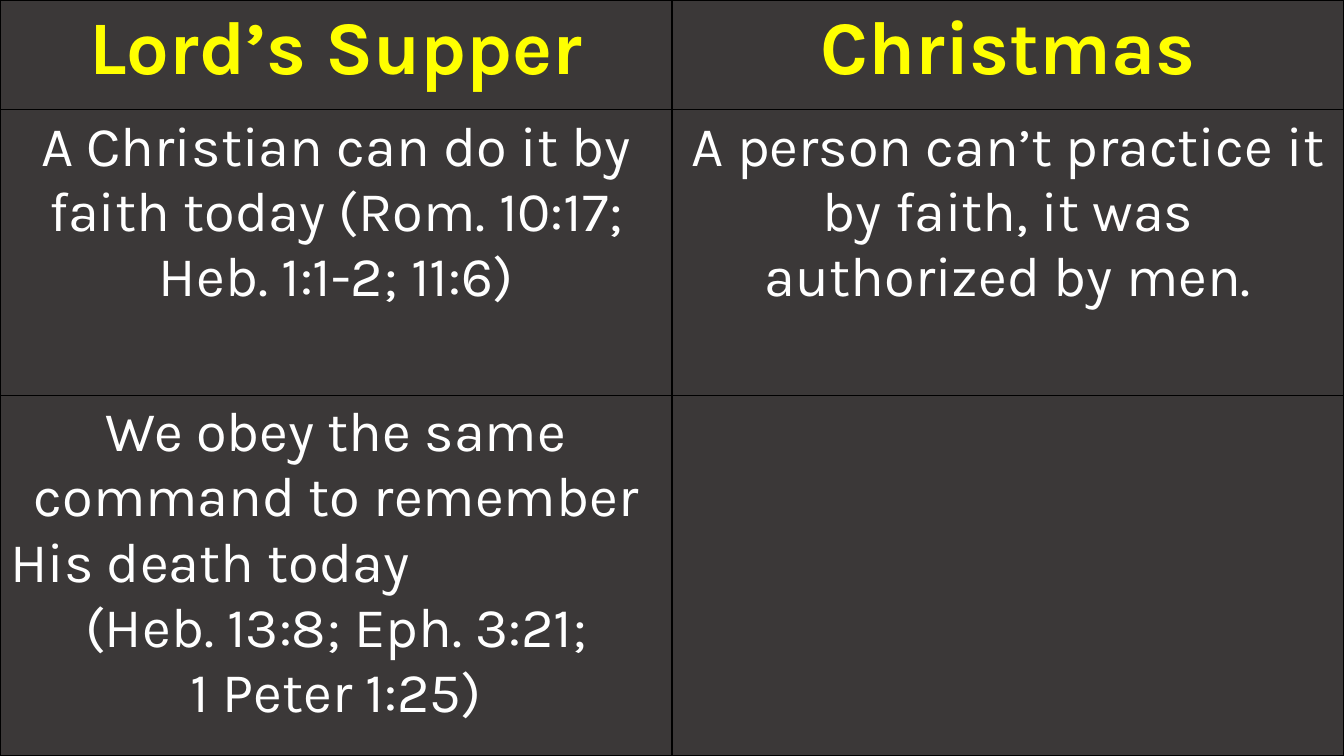
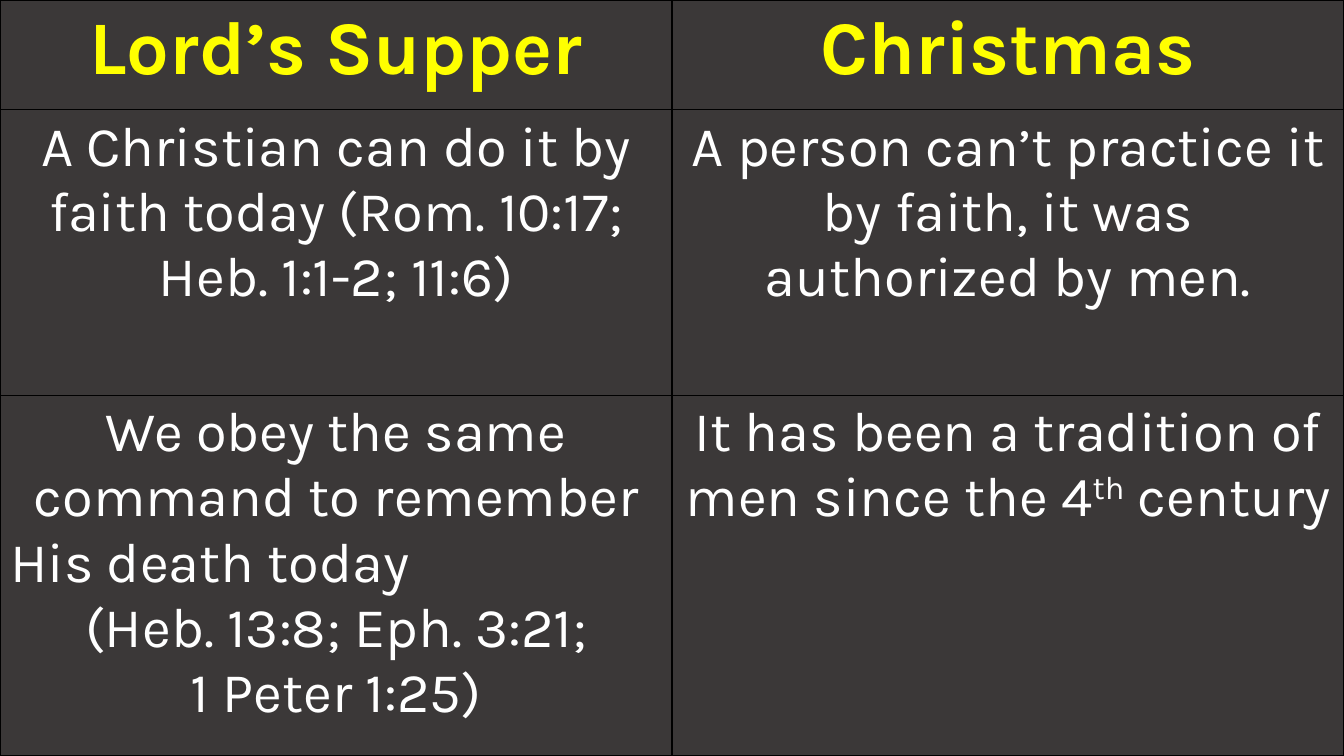
from lxml import etree
from pptx import Presentation
from pptx.dml.color import RGBColor
from pptx.enum.text import PP_ALIGN as Align
from pptx.oxml.ns import qn
from pptx.util import Inches, Pt

BLACK = RGBColor(0x00, 0x00, 0x00)
CHARCOAL = RGBColor(0x3B, 0x38, 0x38)
YELLOW = RGBColor(0xFF, 0xFF, 0x00)
WHITE = RGBColor(0xFF, 0xFF, 0xFF)
FONT = "Karla"
SLIDE_WIDTH, SLIDE_HEIGHT = Inches(13.33), Inches(7.5)
ROW_HEIGHTS = (1.09, 2.83, 3.58)

# A cell is a list of paragraphs: (alignment, list of run texts).
# Every second run of a paragraph is superscript.
CENTER, LEFT = Align.CENTER, Align.LEFT
HEADINGS = [[(CENTER, ["Lord’s Supper"])], [(CENTER, ["Christmas"])]]
FAITH = [
    [(CENTER, ["A Christian can do it by faith today (Rom. 10:17; Heb. 1:1-2; 11:6)"])],
    [(CENTER, ["A person can’t practice it by faith, it was authorized by men."])],
]
COMMAND = [
    (CENTER, ["We obey the same command to remember"]),
    (LEFT, ["His death today"]),
    (CENTER, ["(Heb. 13:8; Eph. 3:21;"]),
    (CENTER, ["1 Peter 1:25)"]),
]
TRADITION = [(CENTER, ["It has been a tradition of men since the 4", "th", " century"])]
SLIDES = [
    [HEADINGS, FAITH, [COMMAND, []]],
    [HEADINGS, FAITH, [COMMAND, TRADITION]],
]


def add_borders(cell):
    properties = cell._tc.get_or_add_tcPr()
    for side in ("lnL", "lnR", "lnT", "lnB"):
        line = etree.SubElement(properties, qn(f"a:{side}"), w=str(Pt(1)))
        fill = etree.SubElement(line, qn("a:solidFill"))
        etree.SubElement(fill, qn("a:srgbClr"), val=str(BLACK))


def fill_cell(cell, paragraphs, is_heading):
    add_borders(cell)
    cell.fill.solid()
    cell.fill.fore_color.rgb = CHARCOAL
    text_frame = cell.text_frame
    for index, (alignment, texts) in enumerate(paragraphs):
        paragraph = text_frame.add_paragraph() if index else text_frame.paragraphs[0]
        paragraph.alignment = alignment
        for run_index, text in enumerate(texts):
            run = paragraph.add_run()
            run.text = text
            run.font.name = FONT
            run.font.size = Pt(54 if is_heading else 40)
            run.font.bold = is_heading
            run.font.color.rgb = YELLOW if is_heading else WHITE
            if run_index % 2:
                run.font._element.set("baseline", "30000")


def add_comparison(presentation, rows):
    slide = presentation.slides.add_slide(presentation.slide_layouts[6])
    slide.background.fill.solid()
    slide.background.fill.fore_color.rgb = BLACK
    table = slide.shapes.add_table(
        len(rows), len(rows[0]), 0, 0, SLIDE_WIDTH, SLIDE_HEIGHT
    ).table
    for row_index, (height, cells) in enumerate(zip(ROW_HEIGHTS, rows)):
        table.rows[row_index].height = Inches(height)
        for column_index, paragraphs in enumerate(cells):
            fill_cell(table.cell(row_index, column_index), paragraphs, row_index == 0)


def main():
    presentation = Presentation()
    presentation.slide_width = SLIDE_WIDTH
    presentation.slide_height = SLIDE_HEIGHT
    for rows in SLIDES:
        add_comparison(presentation, rows)
    presentation.save("out.pptx")


if __name__ == "__main__":
    main()
